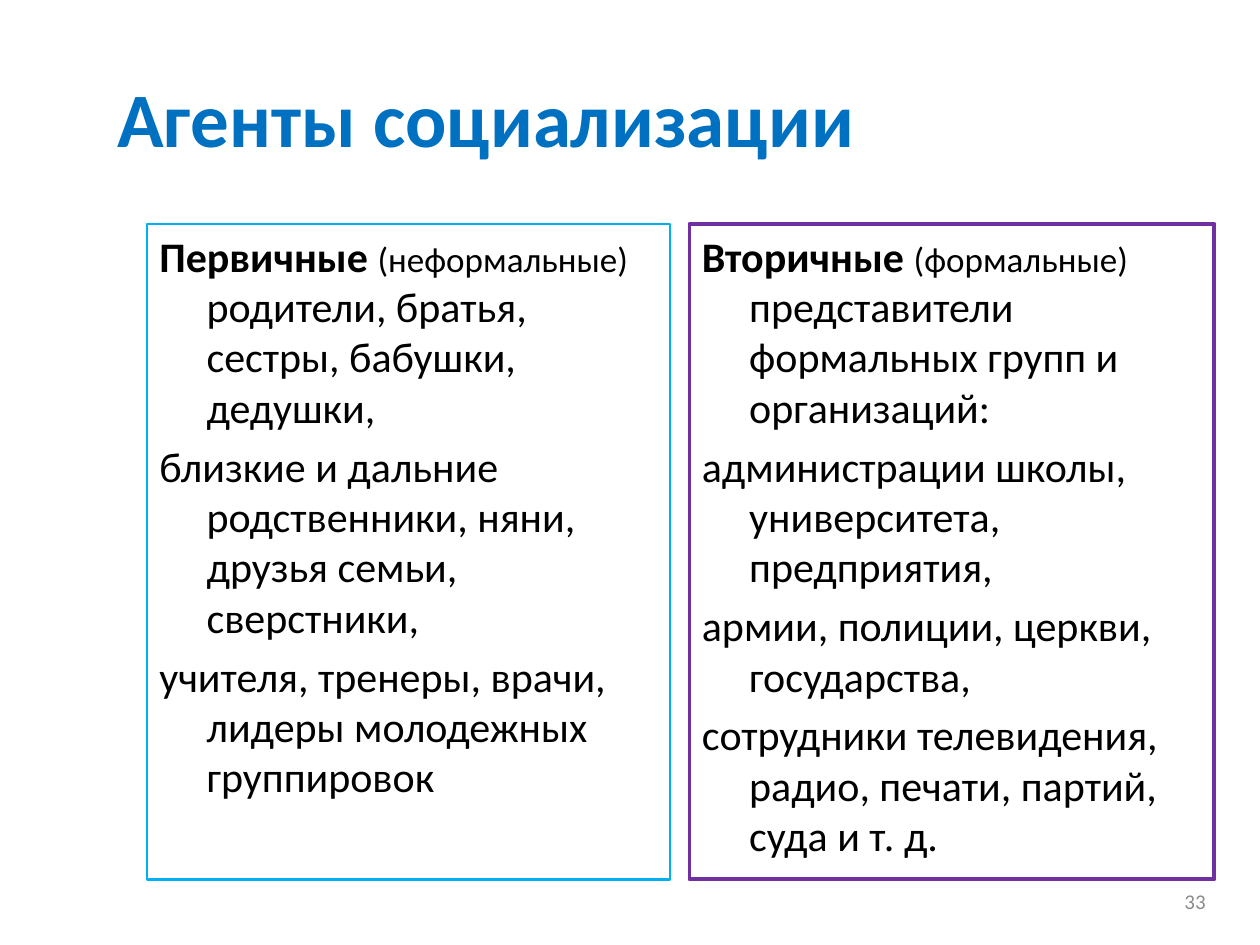
from pptx import Presentation
from pptx.dml.color import RGBColor
from pptx.enum.shapes import MSO_SHAPE
from pptx.enum.text import MSO_ANCHOR, PP_ALIGN
from pptx.util import Pt

FONT = "Calibri"
BLACK = "000000"
TITLE = "Агенты социализации"
PAGE_NUMBER = "33"

# Each paragraph is a list of (text, size, bold) runs.
AGENT_GROUPS = [
    {
        "left": 84, "width": 299, "border": "00B0F0", "border_width": 1.5,
        "paragraphs": [
            [("Первичные ", 24, True), ("(неформальные) ", 20, False),
             ("родители, братья, сестры, бабушки, дедушки,", 24, False)],
            [("близкие и дальние родственники, няни, друзья семьи, сверстники,", 24, False)],
            [("учителя, тренеры, врачи, лидеры молодежных группировок", 24, False)],
        ],
    },
    {
        "left": 394, "width": 300, "border": "7030A0", "border_width": 2.25,
        "paragraphs": [
            [("Вторичные ", 24, True), ("(формальные) ", 20, False),
             ("представители формальных групп и организаций:", 24, False)],
            [("администрации школы, университета, предприятия,", 24, False)],
            [("армии, полиции, церкви, государства,", 24, False)],
            [("сотрудники телевидения, радио, печати, партий, суда и т. д.", 24, False)],
        ],
    },
]
GROUP_TOP, GROUP_HEIGHT = 128, 374.5
HANGING = Pt(27)
PARAGRAPH_GAP = 4.8


def color(hex_string):
    return RGBColor.from_string(hex_string)


def style(font, size, hex_string, bold=False):
    font.name = FONT
    font.size = Pt(size)
    font.bold = bold
    font.color.rgb = color(hex_string)


def add_label(slide, box, text, size, hex_string, bold=False, align=PP_ALIGN.LEFT):
    frame = slide.shapes.add_textbox(*map(Pt, box)).text_frame
    frame.word_wrap = True
    frame.vertical_anchor = MSO_ANCHOR.MIDDLE
    paragraph = frame.paragraphs[0]
    paragraph.text = text
    paragraph.alignment = align
    style(paragraph.runs[0].font, size, hex_string, bold)


def add_group(slide, group):
    panel = slide.shapes.add_shape(
        MSO_SHAPE.RECTANGLE, Pt(group["left"]), Pt(GROUP_TOP),
        Pt(group["width"]), Pt(GROUP_HEIGHT))
    panel.shadow.inherit = False
    panel.fill.background()
    panel.line.color.rgb = color(group["border"])
    panel.line.width = Pt(group["border_width"])
    frame = panel.text_frame
    frame.word_wrap = True
    frame.vertical_anchor = MSO_ANCHOR.TOP
    for index, runs in enumerate(group["paragraphs"]):
        paragraph = frame.add_paragraph() if index else frame.paragraphs[0]
        paragraph.alignment = PP_ALIGN.LEFT
        paragraph.space_before = Pt(PARAGRAPH_GAP if index else 0)
        properties = paragraph._p.get_or_add_pPr()
        properties.set("marL", str(HANGING))
        properties.set("indent", str(-HANGING))
        for text, size, bold in runs:
            run = paragraph.add_run()
            run.text = text
            style(run.font, size, BLACK, bold)


def main():
    deck = Presentation()
    deck.slide_width, deck.slide_height = Pt(720), Pt(540)
    slide = deck.slides.add_slide(deck.slide_layouts[6])
    add_label(slide, (60, 21.6, 636, 90), TITLE, 44, "0070C0", bold=True)
    for group in AGENT_GROUPS:
        add_group(slide, group)
    add_label(slide, (528, 500.5, 168, 28.75), PAGE_NUMBER, 12, "8C8C8C",
              align=PP_ALIGN.RIGHT)
    deck.save("out.pptx")


if __name__ == "__main__":
    main()
